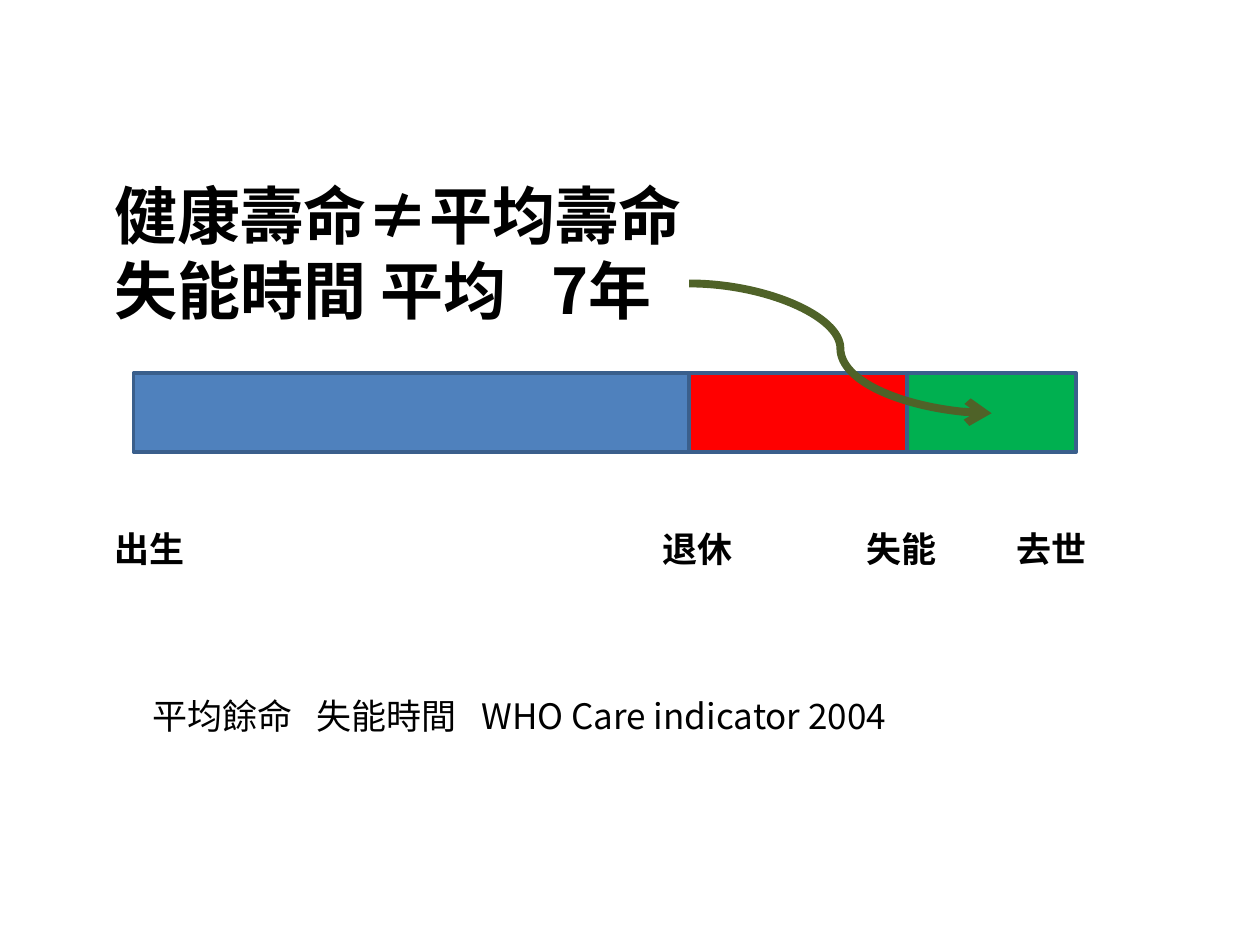
from lxml import etree
from pptx import Presentation
from pptx.dml.color import RGBColor
from pptx.enum.shapes import MSO_CONNECTOR, MSO_SHAPE
from pptx.oxml.ns import qn
from pptx.util import Inches, Pt

RECTANGLE = MSO_SHAPE.RECTANGLE
CURVE = MSO_CONNECTOR.CURVE
FONT = "Noto Sans CJK SC"
BLACK = RGBColor(0x00, 0x00, 0x00)
BLUE = RGBColor(0x4F, 0x81, 0xBD)
RED = RGBColor(0xFF, 0x00, 0x00)
GREEN = RGBColor(0x00, 0xB0, 0x50)
OUTLINE = RGBColor(0x3A, 0x5F, 0x8C)
OLIVE = RGBColor(0x4F, 0x62, 0x28)

prs = Presentation()
prs.slide_width, prs.slide_height = Inches(10), Inches(7.5)
slide = prs.slides.add_slide(prs.slide_layouts[6])


def add_text(lines, left, top, width, height, size, bold):
    """Add a text box without insets, one paragraph per line."""
    frame = slide.shapes.add_textbox(
        Inches(left), Inches(top), Inches(width), Inches(height)).text_frame
    frame.word_wrap = True
    for side in ("left", "top", "right", "bottom"):
        setattr(frame, f"margin_{side}", 0)
    frame.text = "\n".join(lines)
    font_format = {"name": FONT, "size": Pt(size), "bold": bold}
    for paragraph in frame.paragraphs:
        for run in paragraph.runs:
            for attribute, value in font_format.items():
                setattr(run.font, attribute, value)
            run.font.color.rgb = BLACK
            etree.SubElement(run.font._element, qn("a:ea"), typeface=FONT)
    return frame


# Headline; a tab stop sets the figure apart
headline = add_text(["健康壽命≠平均壽命", "失能時間 平均\t7年"],
                    0.91, 1.4, 7, 1.2, 36, True)
for paragraph in headline.paragraphs:
    paragraph.line_spacing = Pt(43)
tab_list = etree.SubElement(
    headline.paragraphs[1]._p.get_or_add_pPr(), qn("a:tabLst"))
etree.SubElement(tab_list, qn("a:tab"), pos=str(Inches(3.47)), algn="l")

# Life span bar, each stage starting where the last one ends
stage_left = 1.06
for stage_width, colour in ((4.41, BLUE), (1.73, RED), (1.34, GREEN)):
    stage = slide.shapes.add_shape(
        RECTANGLE, Inches(stage_left), Inches(2.96),
        Inches(stage_width), Inches(0.63))
    stage.shadow.inherit = False
    stage.fill.solid()
    stage.fill.fore_color.rgb = colour
    stage.line.color.rgb = OUTLINE
    stage.line.width = Pt(2)
    stage_left += stage_width

# Arrow from the years of disability to the last stage
arrow = slide.shapes.add_connector(
    CURVE, Inches(5.47), Inches(2.25), Inches(7.87), Inches(3.28))
arrow.line.color.rgb = OLIVE
arrow.line.width = Pt(4.5)
etree.SubElement(arrow.line._get_or_add_ln(), qn("a:tailEnd"), type="arrow")
etree.SubElement(arrow._element.spPr, qn("a:effectLst"))

# Milestones below the bar
for milestone, left in (("出生", 0.91), ("退休", 5.26),
                        ("失能", 6.88), ("去世", 8.07)):
    add_text([milestone], left, 4.19, 0.8, 0.4, 20, True)

# Source note
for note, left, width in (("平均餘命", 1.21, 1.2), ("失能時間", 2.51, 1.2),
                          ("WHO Care indicator 2004", 3.82, 4)):
    add_text([note], left, 5.51, width, 0.4, 20, False)

prs.save("out.pptx")
